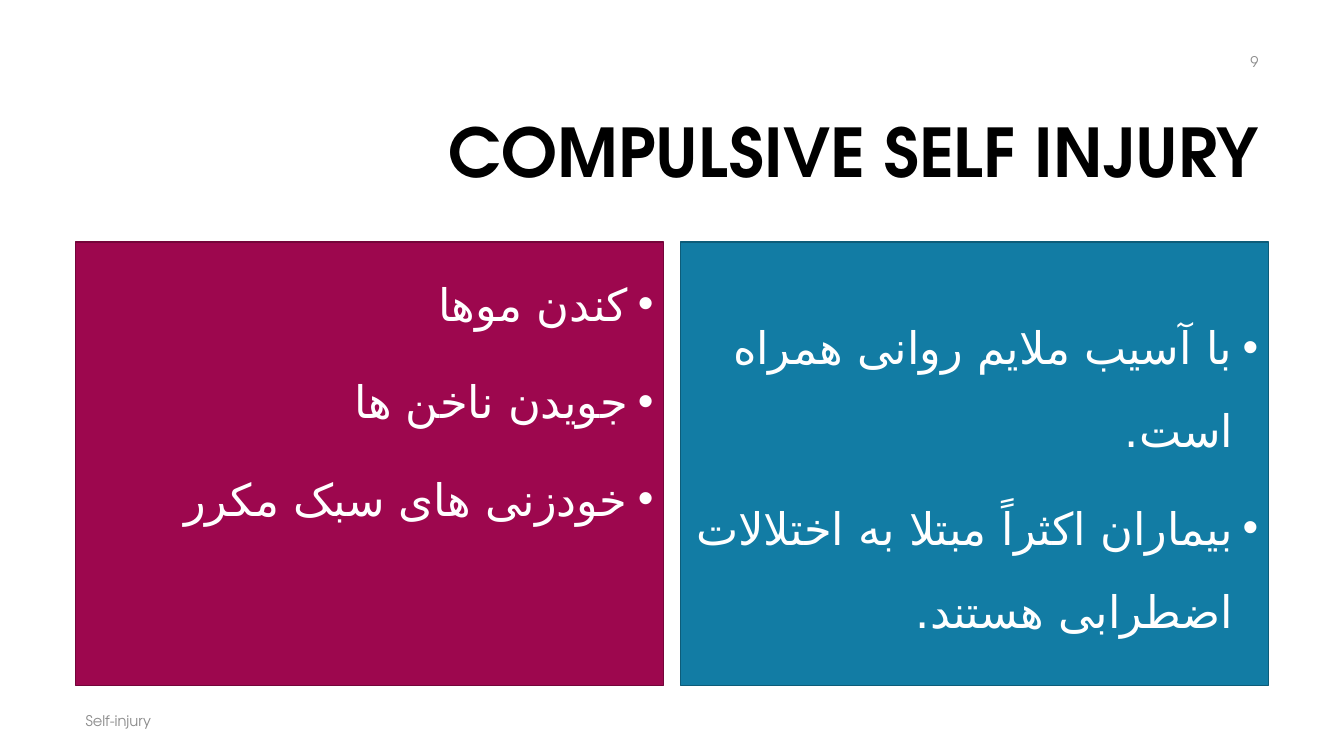
from dataclasses import dataclass

from lxml.etree import SubElement
from pptx import Presentation
from pptx.dml.color import RGBColor as RGB
from pptx.enum.lang import MSO_LANGUAGE_ID as Lang
from pptx.enum.text import MSO_ANCHOR as Anchor, MSO_AUTO_SIZE as AutoSize, PP_ALIGN as Align
from pptx.oxml.ns import qn
from pptx.util import Inches, Pt

COLUMNS, ROWS = 160, 150


@dataclass(frozen=True)
class Theme:
    """Colours, fonts and type sizes of the deck."""
    font: str = "TeX Gyre Adventor"
    persian_font: str = "DejaVu Sans"
    title: str = "000000"
    text: str = "FFFFFF"
    muted: str = "8C8C8C"
    berry: tuple = ("9D074E", "74053A")
    teal: tuple = ("127CA4", "0D5C79")
    title_size: float = 48
    body_size: float = 32
    small_size: float = 10.5


def write(p, text, *, font, size, color, bold=False, align=Align.LEFT, persian_font=None):
    """Add text to a paragraph with the given format."""
    p.alignment = align
    r = p.add_run()
    r.text = text
    r.font.name, r.font.size, r.font.bold = font, Pt(size), bold
    r.font.color.rgb = RGB.from_string(color)
    if persian_font:
        r.font.language_id = Lang.FARSI
        SubElement(r.font._element, qn("a:cs")).set("typeface", persian_font)


class SlideBuilder:
    """Places styled elements on a grid of columns and rows."""

    def __init__(self, prs, theme):
        """Add a two-content slide to the presentation."""
        self.theme = theme
        self.col, self.row = prs.slide_width / COLUMNS, prs.slide_height / ROWS
        self.s = prs.slides.add_slide(prs.slide_layouts[3])

    def box(self, x, y, w, h):
        """Return left, top, width and height of a grid area."""
        return [round(v) for v in (x * self.col, y * self.row, w * self.col, h * self.row)]

    def frame(self, sp, area, anchor):
        """Move a shape to a grid area and prepare its text frame."""
        sp.left, sp.top, sp.width, sp.height = self.box(*area)
        tf = sp.text_frame
        tf.word_wrap, tf.auto_size, tf.vertical_anchor = True, AutoSize.NONE, anchor
        return tf

    def title(self, text, area):
        """Fill the title placeholder."""
        t = self.theme
        p = self.frame(self.s.shapes.title, area, Anchor.MIDDLE).paragraphs[0]
        p.line_spacing = 0.9
        write(p, text, font=t.font, size=t.title_size, color=t.title, bold=True, align=Align.RIGHT)

    def panel(self, idx, items, area, colors, anchor):
        """Fill a body placeholder with a right-to-left list."""
        t = self.theme
        sp = self.s.placeholders[idx]
        tf = self.frame(sp, area, anchor)
        fill, line = colors
        sp.fill.solid()
        sp.fill.fore_color.rgb = RGB.from_string(fill)
        sp.line.color.rgb = RGB.from_string(line)
        sp.line.width = Pt(1)
        for i, item in enumerate(items):
            p = tf.add_paragraph() if i else tf.paragraphs[0]
            pPr = p._p.get_or_add_pPr()
            indent = Inches(0.25)
            for key, value in (("marL", indent), ("marR", 0), ("indent", -indent), ("rtl", 1)):
                pPr.set(key, str(value))
            SubElement(pPr, qn("a:buFont")).set("typeface", "Arial")
            SubElement(pPr, qn("a:buChar")).set("char", "•")
            p.line_spacing, p.space_before = 1.55, Pt(10 if i else 0)
            write(p, item, font=t.font, size=t.body_size, color=t.text, align=Align.RIGHT,
                  persian_font=t.persian_font)

    def note(self, text, area, align):
        """Add a small muted text box."""
        t = self.theme
        sp = self.s.shapes.add_textbox(*self.box(*area))
        p = self.frame(sp, area, Anchor.MIDDLE).paragraphs[0]
        write(p, text, font=t.font, size=t.small_size, color=t.muted, align=align)


def main():
    """Build and save the slide."""
    prs = Presentation()
    prs.slide_width, prs.slide_height = Inches(13.33), Inches(7.5)
    theme = Theme()
    slide = SlideBuilder(prs, theme)
    margin, gap, panel_width = 9, 2, 70
    panels = [
        (["کندن موها", "جویدن ناخن ها", "خودزنی های سبک مکرر"], theme.berry, Anchor.TOP),
        (["با آسیب ملایم روانی همراه است.", "بیماران اکثراً مبتلا به اختلالات اضطرابی هستند."],
         theme.teal, Anchor.MIDDLE),
    ]
    slide.title("COMPULSIVE SELF INJURY", (38, 16.8, 113, 28.2))
    for i, (items, colors, anchor) in enumerate(panels):
        area = (margin + i * (panel_width + gap), 48, panel_width, 88)
        slide.panel(i + 1, items, area, colors, anchor)
    slide.note("9", (115, 8.3, 36, 8), Align.RIGHT)
    slide.note("Self-injury", (margin, 139, 102, 8), Align.LEFT)
    prs.save("out.pptx")


if __name__ == "__main__":
    main()
